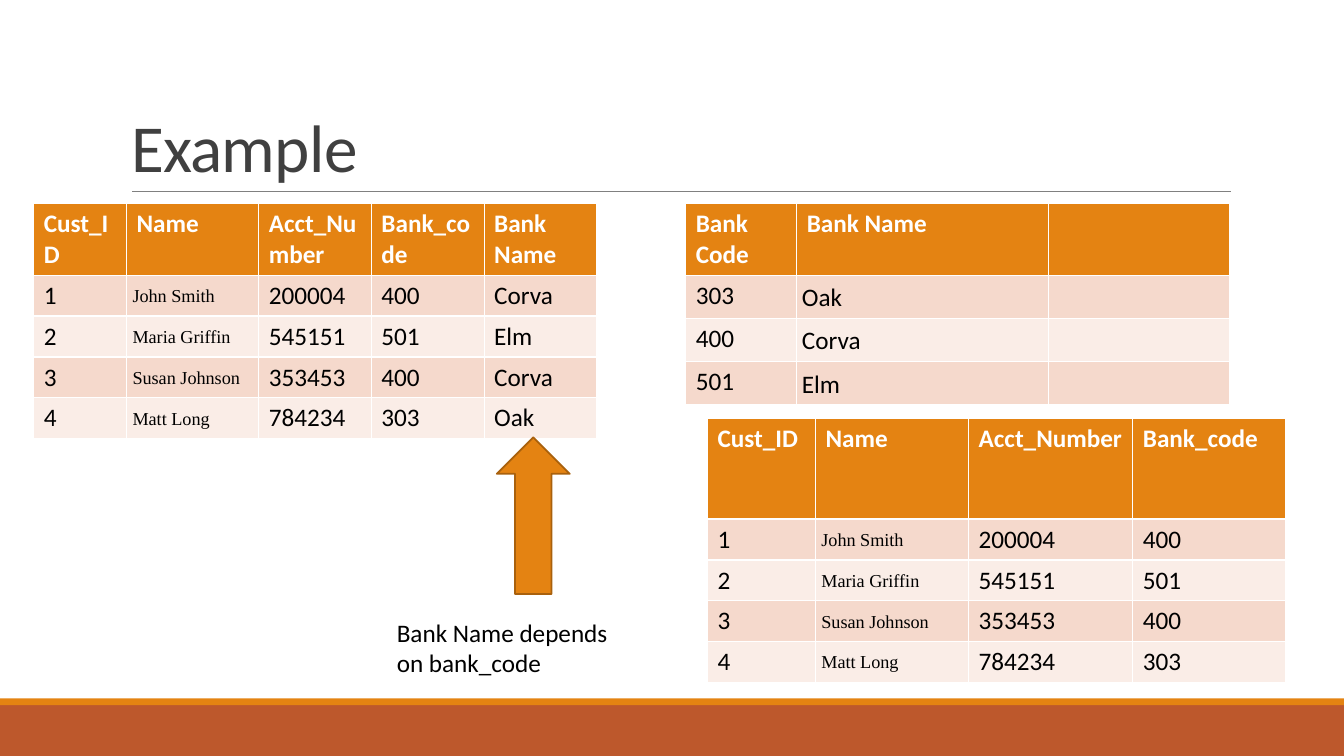
from dataclasses import dataclass

from lxml import etree
from pptx import Presentation
from pptx.dml.color import RGBColor
from pptx.enum.shapes import MSO_CONNECTOR, MSO_SHAPE
from pptx.enum.text import MSO_ANCHOR, MSO_AUTO_SIZE, PP_ALIGN
from pptx.oxml.ns import qn
from pptx.util import Cm, Pt

STRAIGHT = MSO_CONNECTOR.STRAIGHT
RECTANGLE = MSO_SHAPE.RECTANGLE
UP_ARROW = MSO_SHAPE.UP_ARROW
BOTTOM = MSO_ANCHOR.BOTTOM
MIDDLE = MSO_ANCHOR.MIDDLE
LEFT = PP_ALIGN.LEFT
NO_FIT = MSO_AUTO_SIZE.NONE
TITLE_ONLY = 5
WIDTH, HEIGHT = 33.87, 19.05


@dataclass(frozen=True)
class Theme:
    """Colours, fonts and type sizes of the slide."""
    orange: str = "E48312"
    rust: str = "BD582C"
    arrow_edge: str = "A9610D"
    rule: str = "808080"
    title: str = "404040"
    black: str = "000000"
    white: str = "FFFFFF"
    bands: tuple = ("F5D9CC", "FAEDE7")
    sans: str = "Calibri"
    serif: str = "Times New Roman"
    title_size: int = 48
    body_size: int = 18
    name_size: int = 13


THEME = Theme()

ACCOUNTS = [
    ("Cust_ID", "Name", "Acct_Number", "Bank_code", "Bank Name"),
    ("1", "John Smith", "200004", "400", "Corva"),
    ("2", "Maria Griffin", "545151", "501", "Elm"),
    ("3", "Susan Johnson", "353453", "400", "Corva"),
    ("4", "Matt Long", "784234", "303", "Oak"),
]
BANKS = [
    ("Bank Code", "Bank Name", ""),
    ("303", "Oak", ""),
    ("400", "Corva", ""),
    ("501", "Elm", ""),
]


def style_text(paragraph, size, color, font=THEME.sans, bold=False):
    """Format every run of a paragraph."""
    for run in paragraph.runs:
        run.font.size = Pt(size)
        run.font.name = font
        run.font.bold = bold
        run.font.color.rgb = RGBColor.from_string(color)


def paint(part, color):
    """Give a shape or cell a solid fill."""
    part.fill.solid()
    part.fill.fore_color.rgb = RGBColor.from_string(color)


def add_block(slide, kind, box, color):
    """Add a filled shape without outline or shadow."""
    block = slide.shapes.add_shape(kind, *map(Cm, box))
    block.shadow.inherit = False
    paint(block, color)
    block.line.fill.background()
    return block


def add_footer_bands(slide, box):
    """Draw the rust footer with a thin orange strip along its top."""
    left, top, width, height = box
    strip = 0.17
    add_block(slide, RECTANGLE, (left, top + strip, width, height - strip), THEME.rust)
    add_block(slide, RECTANGLE, (left, top, width, strip), THEME.orange)


def add_heading(slide, box):
    """Place the title and the rule beneath it."""
    left, top, width, height = box
    title = slide.shapes.title
    title.left, title.top, title.width, title.height = map(Cm, box)
    frame = title.text_frame
    frame.text = "Example"
    frame.auto_size = NO_FIT
    frame.vertical_anchor = BOTTOM
    heading = frame.paragraphs[0]
    heading.alignment = LEFT
    heading.line_spacing = 0.85
    style_text(heading, THEME.title_size, THEME.title)
    heading.runs[0].font._element.set("spc", "-50")
    rule_left, rule_y = left + 0.28, top + height
    rule = slide.shapes.add_connector(
        STRAIGHT, Cm(rule_left), Cm(rule_y), Cm(left + width + 0.03), Cm(rule_y))
    rule.line.color.rgb = RGBColor.from_string(THEME.rule)
    rule.line.width = Pt(0.5)
    etree.SubElement(rule._element.spPr, qn("a:effectLst"))


def format_name_cell(cell, inset):
    """Centre a name vertically with tight margins and open spacing."""
    cell.vertical_anchor = MIDDLE
    cell.margin_left = cell.margin_right = Cm(inset)
    cell.margin_top = cell.margin_bottom = Cm(inset)
    name = cell.text_frame.paragraphs[0]
    name.line_spacing = 1.07
    name.space_after = Pt(18)


def add_records(slide, corner, columns, header_height, records,
                name_font=THEME.serif, name_size=THEME.name_size, name_inset=0.15):
    """Build a banded table whose second column holds names."""
    row_height = 1.03
    box = (*corner, sum(columns), header_height + row_height * (len(records) - 1))
    table = slide.shapes.add_table(len(records), len(columns), *map(Cm, box)).table
    for column, width in zip(table.columns, columns):
        column.width = Cm(width)
    for r, record in enumerate(records):
        header = r == 0
        table.rows[r].height = Cm(header_height if header else row_height)
        for c, value in enumerate(record):
            cell = table.cell(r, c)
            cell.text = value
            paint(cell, THEME.orange if header else THEME.bands[(r - 1) % 2])
            words = cell.text_frame.paragraphs[0]
            if header:
                style_text(words, THEME.body_size, THEME.white, bold=True)
            elif c == 1:
                format_name_cell(cell, name_inset)
                style_text(words, name_size, THEME.black, name_font)
            else:
                style_text(words, THEME.body_size, THEME.black)


def add_dependency_note(slide, box):
    """Place the arrow at the top of the box and its caption at the bottom."""
    left, top, width, height = box
    arrow = add_block(slide, UP_ARROW, (left + 2.77, top, 1.84, 3.95), THEME.orange)
    arrow.line.color.rgb = RGBColor.from_string(THEME.arrow_edge)
    arrow.line.width = Pt(1.25)
    caption_height = 1.8
    caption = slide.shapes.add_textbox(
        Cm(left), Cm(top + height - caption_height), Cm(width), Cm(caption_height))
    frame = caption.text_frame
    frame.word_wrap = True
    frame.text = "Bank Name depends on bank_code"
    style_text(frame.paragraphs[0], THEME.body_size, THEME.black)


def main():
    """Build and save the slide."""
    deck = Presentation()
    deck.slide_width, deck.slide_height = Cm(WIDTH), Cm(HEIGHT)
    slide = deck.slides.add_slide(deck.slide_layouts[TITLE_ONLY])
    add_footer_bands(slide, (0, 17.6, WIDTH, HEIGHT - 17.6))
    add_heading(slide, (3.05, 0.79, 27.94, 4.04))
    add_records(slide, (0.85, 5.13), (2.34, 3.33, 2.84, 2.84, 2.84), 1.78, ACCOUNTS)
    add_records(slide, (17.28, 5.13), (2.8, 6.34, 4.57), 1.78, BANKS,
                THEME.sans, THEME.body_size, 0.13)
    add_records(slide, (17.83, 10.54), (2.72, 3.86, 4.14, 3.86), 2.54,
                [record[:4] for record in ACCOUNTS])
    add_dependency_note(slide, (9.75, 11.02, 6.43, 6.2))
    deck.save("out.pptx")


if __name__ == "__main__":
    main()
